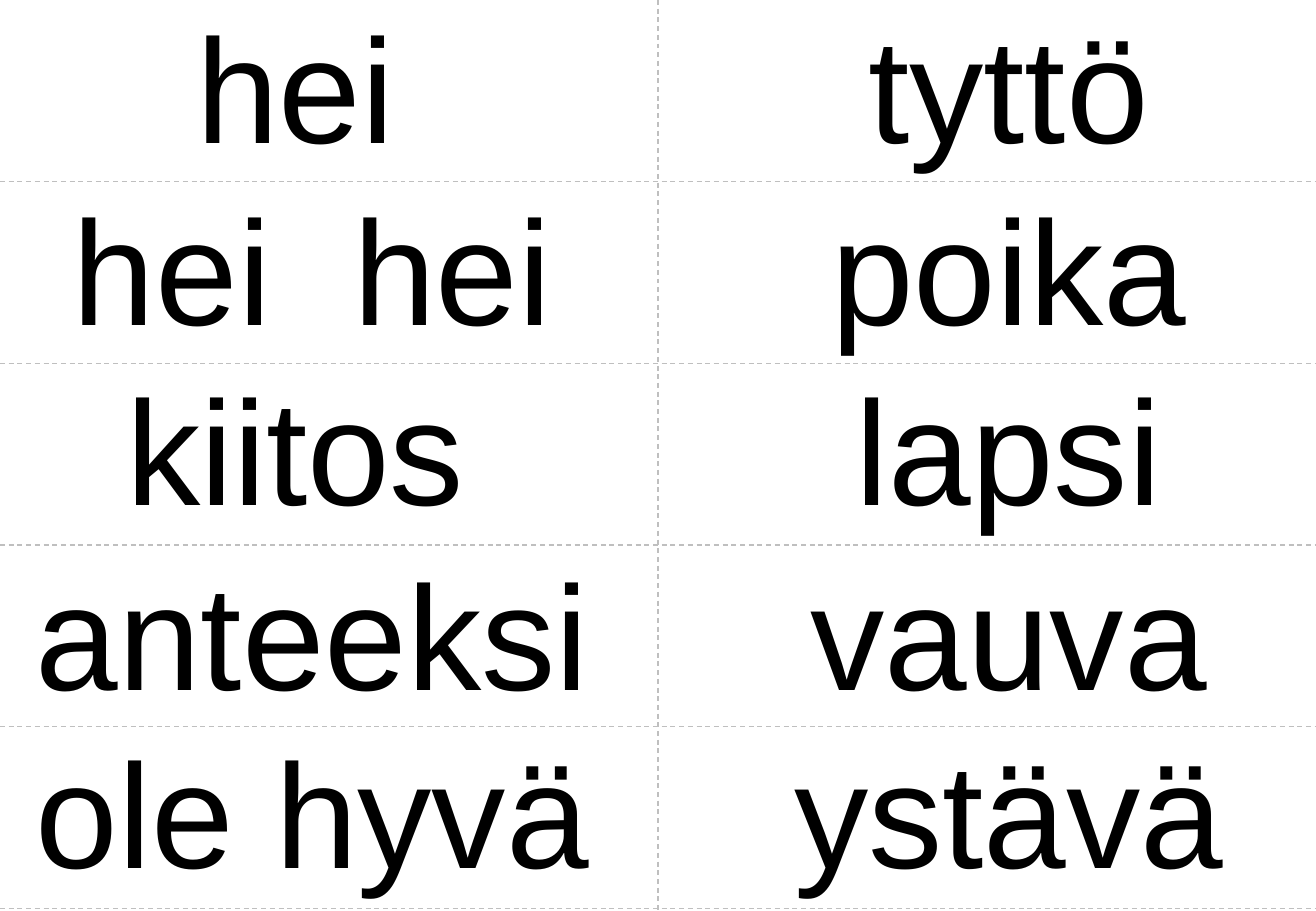
import pptx
import pptx.dml.color
import pptx.enum.dml
import pptx.enum.shapes
import pptx.enum.text
import pptx.oxml.ns
import pptx.util
from lxml import etree
from pptx.util import Inches

COLORS = {"text": "000000", "cut_line": "BFBFBF"}
SLIDE_WIDTH, SLIDE_HEIGHT = 10.83, 7.5
GRID_HEIGHT = 7.48
WORD_HEIGHT = 1.48
ROW_TOPS = [-0.09, 1.41, 2.89, 4.41, 5.88]

# Each column lists its cards from top to bottom: word, centre, width
COLUMNS = [
    [("hei", 2.43, 1.74), ("hei  hei", 2.57, 4.06), ("kiitos", 2.43, 2.9),
     ("anteeksi", 2.57, 4.67), ("ole hyvä", 2.57, 4.67)],
    [("tyttö", 8.3, 2.42), ("poika", 8.3, 3.04), ("lapsi", 8.3, 2.63),
     ("vauva", 8.3, 3.38), ("ystävä", 8.3, 3.65)],
]


def rgb(name):
    return pptx.dml.color.RGBColor.from_string(COLORS[name])


def add_text(slide, text, left, top, width, height, *, size=88,
             font="Arial", color="text"):
    shape = slide.shapes.add_textbox(
        Inches(left), Inches(top), Inches(width), Inches(height))
    frame = shape.text_frame
    frame.word_wrap = False
    frame.auto_size = pptx.enum.text.MSO_AUTO_SIZE.SHAPE_TO_FIT_TEXT
    frame.margin_left = frame.margin_right = Inches(0.05)
    frame.margin_top = frame.margin_bottom = Inches(0.05)
    paragraph = frame.paragraphs[0]
    paragraph.alignment = pptx.enum.text.PP_ALIGN.CENTER
    run = paragraph.add_run()
    run.text = text
    run.font.size = pptx.util.Pt(size)
    run.font.name = font
    run.font.color.rgb = rgb(color)


def add_cut_line(slide, x1, y1, x2, y2):
    connector = slide.shapes.add_connector(
        pptx.enum.shapes.MSO_CONNECTOR.STRAIGHT,
        Inches(x1), Inches(y1), Inches(x2), Inches(y2))
    connector.line.color.rgb = rgb("cut_line")
    connector.line.width = pptx.util.Pt(0.75)
    connector.line.dash_style = pptx.enum.dml.MSO_LINE.DASH
    properties = connector.element.find(pptx.oxml.ns.qn("p:spPr"))
    etree.SubElement(properties, pptx.oxml.ns.qn("a:effectLst"))


def main():
    presentation = pptx.Presentation()
    presentation.slide_width = Inches(SLIDE_WIDTH)
    presentation.slide_height = Inches(SLIDE_HEIGHT)
    slide = presentation.slides.add_slide(presentation.slide_layouts[6])

    # Word cards
    for cards in COLUMNS:
        for top, (word, center, width) in zip(ROW_TOPS, cards):
            add_text(slide, word, center - width / 2, top, width, WORD_HEIGHT)

    # Cutting lines
    middle = SLIDE_WIDTH / 2
    add_cut_line(slide, middle, 0, middle, SLIDE_HEIGHT)
    row_count = len(ROW_TOPS)
    for row in range(1, row_count + 1):
        y = GRID_HEIGHT * row / row_count
        add_cut_line(slide, 0, y, SLIDE_WIDTH, y)

    presentation.save("out.pptx")


if __name__ == "__main__":
    main()
